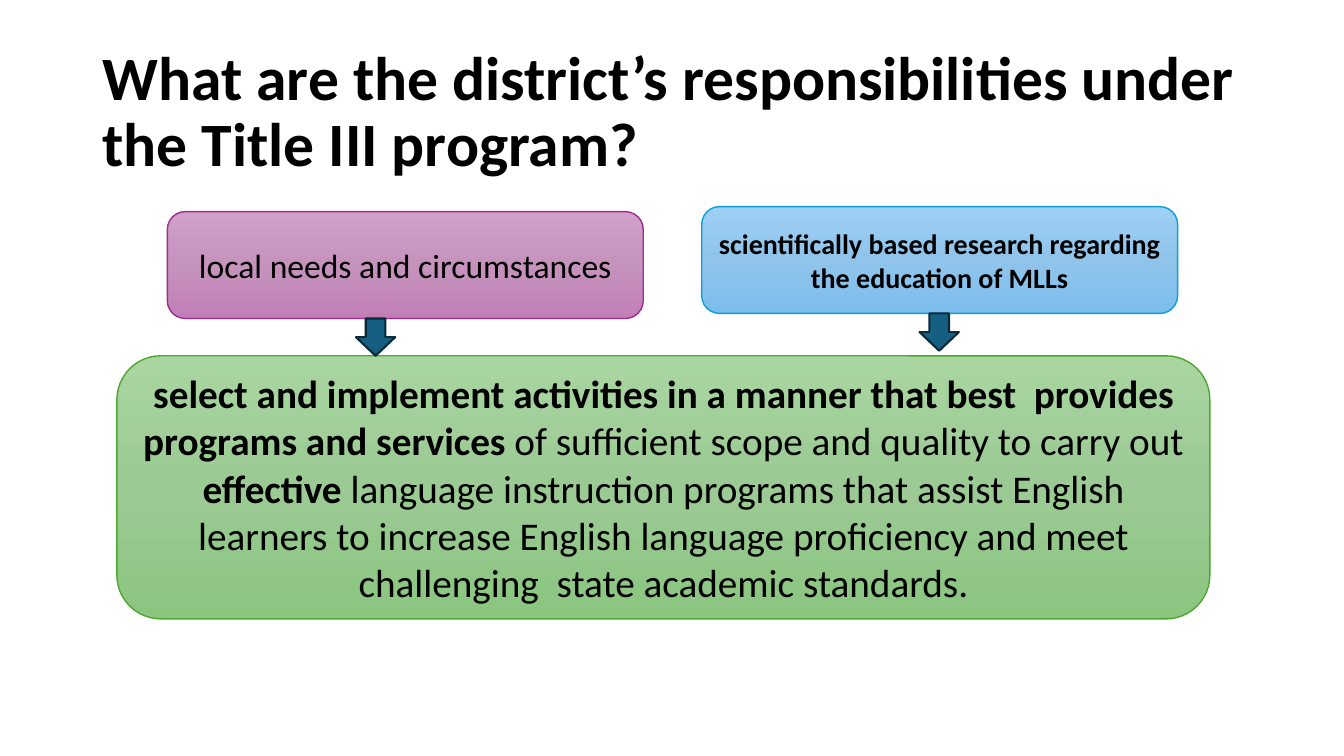
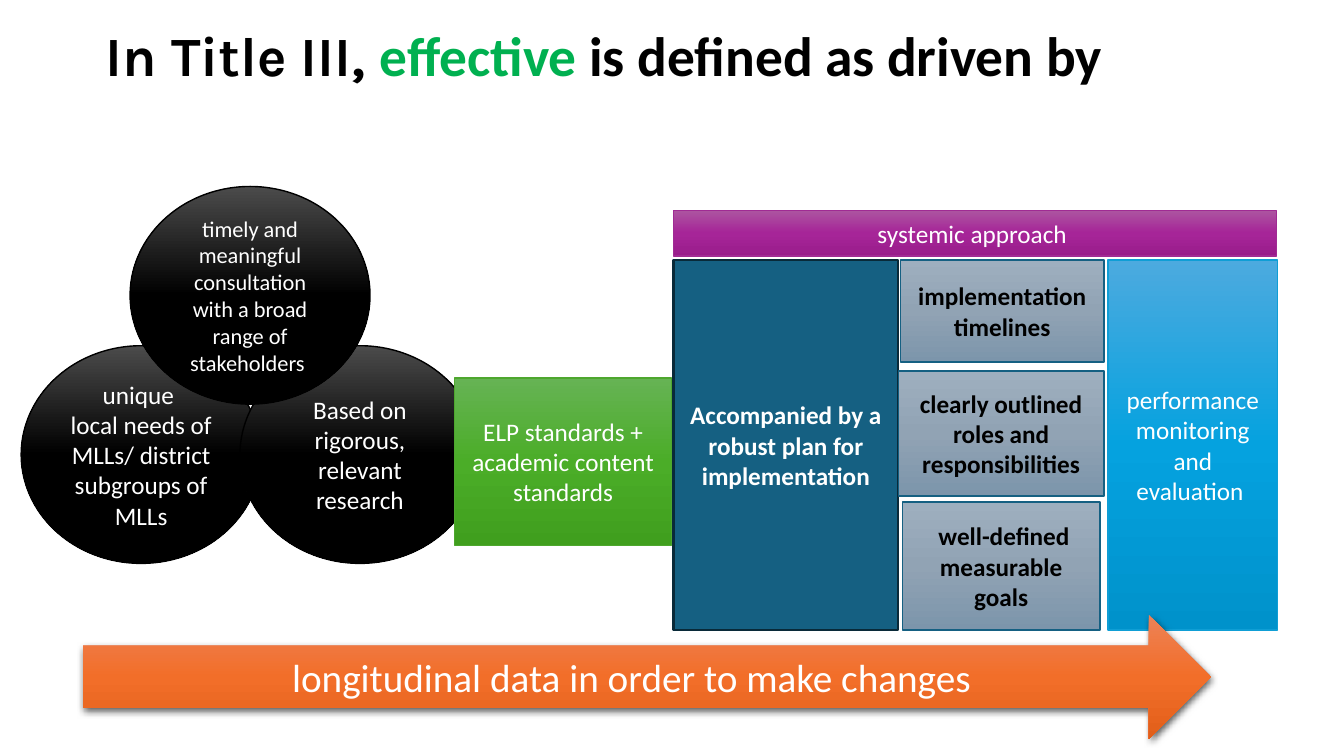
from copy import deepcopy

from lxml.etree import SubElement
from pptx import Presentation
from pptx.dml.color import RGBColor
from pptx.enum.shapes import MSO_SHAPE as Preset
from pptx.enum.text import MSO_ANCHOR as Anchor, PP_ALIGN as Align
from pptx.oxml.ns import qn
from pptx.util import Inches, Pt

BLACK = RGBColor(0x00, 0x00, 0x00)
WHITE = RGBColor(0xFF, 0xFF, 0xFF)
EMPHASIS = RGBColor(0x00, 0xB0, 0x50)
TEAL = RGBColor(0x15, 0x60, 0x82)
TEAL_DARK = RGBColor(0x09, 0x2A, 0x39)
PURPLE = RGBColor(0xA0, 0x2B, 0x93)
BLUE = RGBColor(0x0F, 0x9E, 0xD5)
GREEN = RGBColor(0x4E, 0xA7, 0x2E)

PALE_GREEN = (RGBColor(0xA8, 0xD5, 0xA0), RGBColor(0x9C, 0xCA, 0x94), RGBColor(0x8A, 0xC6, 0x80))
PALE_PURPLE = (RGBColor(0xD0, 0xA0, 0xC8), RGBColor(0xC6, 0x93, 0xBD), RGBColor(0xC1, 0x7F, 0xB6))
PALE_BLUE = (RGBColor(0x9E, 0xCF, 0xF5), RGBColor(0x90, 0xC4, 0xEB), RGBColor(0x7C, 0xBE, 0xED))
SLATE = (RGBColor(0x9E, 0xAF, 0xBF), RGBColor(0x91, 0xA3, 0xB4), RGBColor(0x7C, 0x95, 0xAB))
GLOSS_BLACK = (RGBColor(0x4B, 0x4B, 0x4B), BLACK, BLACK)
GLOSS_PURPLE = (RGBColor(0xAC, 0x53, 0xA0), RGBColor(0xA6, 0x25, 0x98), RGBColor(0x99, 0x1C, 0x8B))
GLOSS_GREEN = (RGBColor(0x66, 0xB3, 0x54), RGBColor(0x4B, 0xAD, 0x28), RGBColor(0x40, 0x9F, 0x1E))
GLOSS_BLUE = (RGBColor(0x4C, 0xAA, 0xDF), RGBColor(0x05, 0xA2, 0xDF), RGBColor(0x00, 0x92, 0xCB))
GLOSS_ORANGE = (RGBColor(0xED, 0x82, 0x57), RGBColor(0xF2, 0x6E, 0x29), RGBColor(0xE2, 0x5F, 0x1A))


class SlideBuilder:
    body_format = {"name": "Calibri", "size": Pt(18), "bold": False, "color": BLACK}

    def __init__(self, deck):
        self.deck = deck
        self.page = None

    def add_page(self):
        self.page = self.deck.slides.add_slide(self.deck.slide_layouts[6])

    def add_span(self, para, text, **changes):
        span = para.add_run()
        span.text = text
        for key, value in {**self.body_format, **changes}.items():
            if key == "color":
                span.font.color.rgb = value
            else:
                setattr(span.font, key, value)

    def add_title(self, place, spans, size):
        frame = self.page.shapes.add_textbox(*map(Inches, place)).text_frame
        frame.word_wrap = True
        frame.vertical_anchor = Anchor.MIDDLE
        para = frame.paragraphs[0]
        para.line_spacing = 0.9
        for text, changes in spans:
            self.add_span(para, text, **{"size": Pt(size), "bold": True, **changes})

    def add_gradient(self, box, colors):
        box.fill.gradient()
        box.fill.gradient_angle = 270
        stop_list = box._element.spPr.find(".//" + qn("a:gsLst"))
        stop_list.insert(1, deepcopy(stop_list[0]))
        for stop, position, color in zip(box.fill.gradient_stops, (0, 0.5, 1), colors):
            stop.position = position
            stop.color.rgb = color

    def add_box(self, preset, place, fill, line=None, paragraphs=(), width=1, **changes):
        box = self.page.shapes.add_shape(preset, *map(Inches, place))
        box.shadow.inherit = False
        if isinstance(fill, RGBColor):
            box.fill.solid()
            box.fill.fore_color.rgb = fill
        else:
            self.add_gradient(box, fill)
        if line is None:
            box.line.fill.background()
        else:
            box.line.color.rgb = line
            box.line.width = Pt(width)
        frame = box.text_frame
        frame.word_wrap = True
        frame.vertical_anchor = Anchor.MIDDLE
        for index, spans in enumerate(paragraphs):
            para = frame.add_paragraph() if index else frame.paragraphs[0]
            para.alignment = Align.CENTER
            for text, span_changes in spans:
                self.add_span(para, text, **{**changes, **span_changes})
        return box

    def add_label(self, preset, place, fill, line, text, **changes):
        paragraphs = [[(part, {})] for part in text.split("\n")]
        return self.add_box(preset, place, fill, line, paragraphs, **changes)

    def add_shadow(self, box):
        effects = box._element.spPr.find(qn("a:effectLst"))
        shadow = SubElement(effects, qn("a:outerShdw"), blurRad=str(Pt(4.5)),
                            dist=str(Pt(1.5)), dir="5400000", algn="ctr", rotWithShape="0")
        color = SubElement(shadow, qn("a:srgbClr"), val=str(BLACK))
        SubElement(color, qn("a:alpha"), val="63000")


def build_responsibilities(builder):
    builder.add_page()
    builder.add_title((0.92, 0.4, 11.5, 1.45), [
        ("What are the district’s responsibilities under the Title III program?", {})], 44)
    strong = {"bold": True}
    builder.add_box(Preset.ROUNDED_RECTANGLE, (1.16, 3.53, 10.84, 2.61), PALE_GREEN, GREEN, [[
        ("select and implement activities in a manner that best  provides "
         "programs and services ", strong),
        ("of sufficient scope and quality to carry out ", {}),
        ("effective", strong),
        (" language instruction programs that assist English learners to increase English "
         "language proficiency and meet challenging  state academic standards.", {}),
    ]], size=Pt(28))
    sources = [
        (1.66, 2.1, 3.53, PALE_PURPLE, PURPLE, "local needs and circumstances",
         {"size": Pt(24)}),
        (6.96, 2.05, 9.12, PALE_BLUE, BLUE,
         "scientifically based research regarding the education of MLLs",
         {"size": Pt(20), "bold": True}),
    ]
    height = 1.06
    for left, top, arrow_left, fill, line, text, changes in sources:
        builder.add_label(Preset.ROUNDED_RECTANGLE, (left, top, 4.72, height),
                          fill, line, text, **changes)
        builder.add_box(Preset.DOWN_ARROW, (arrow_left, top + height, 0.39, 0.37),
                        TEAL, TEAL_DARK, width=1.5)


def build_effective(builder):
    builder.add_page()
    builder.add_title((0.95, 0.45, 11.81, 0.26), [
        ("In Title III, ", {"name": "Karla"}),
        ("effective", {"color": EMPHASIS}),
        (" is defined as driven by", {}),
    ], 39.6)

    def add_circle(left, top, text, size=18):
        builder.add_label(Preset.OVAL, (left, top, 2.38, 2.16), GLOSS_BLACK, BLACK, text,
                          size=Pt(size), color=WHITE)

    add_circle(0.21, 3.43, "unique \nlocal needs of MLLs/ district subgroups of MLLs")
    add_circle(2.38, 3.43, "Based on rigorous, relevant research")

    plan_top, plan_height = 2.58, 3.67
    builder.add_label(Preset.RECTANGLE, (6.68, plan_top, 2.23, plan_height), TEAL, TEAL_DARK,
                      "Accompanied by a robust plan for implementation",
                      width=1.5, bold=True, color=WHITE)
    plan_parts = [
        ((8.95, 4.98, 1.96, 1.27), " well-defined measurable goals"),
        ((8.91, 3.68, 2.04, 1.24), "clearly outlined roles and responsibilities"),
        ((8.93, plan_top, 2.02, 1.01), "implementation timelines"),
    ]
    for place, text in plan_parts:
        builder.add_label(Preset.RECTANGLE, place, SLATE, TEAL, text, bold=True)
    panels = [
        ((6.68, 2.09, 5.98, 0.45), GLOSS_PURPLE, PURPLE, "systemic approach "),
        ((4.51, 3.75, 2.15, 1.66), GLOSS_GREEN, GREEN,
         "ELP standards + academic content standards"),
        ((10.99, plan_top, 1.68, plan_height), GLOSS_BLUE, BLUE,
         "performance monitoring and evaluation "),
    ]
    for place, fill, line, text in panels:
        builder.add_label(Preset.RECTANGLE, place, fill, line, text, color=WHITE)

    arrow = builder.add_label(Preset.RIGHT_ARROW, (0.82, 6.1, 11.19, 1.23), GLOSS_ORANGE, None,
                              "longitudinal data in order to make changes",
                              size=Pt(28), color=WHITE)
    builder.add_shadow(arrow)
    add_circle(1.29, 1.85, "timely and meaningful consultation with a broad range of "
               "stakeholders ", 16)


def main():
    deck = Presentation()
    deck.slide_width, deck.slide_height = Inches(13.33), Inches(7.5)
    builder = SlideBuilder(deck)
    build_responsibilities(builder)
    build_effective(builder)
    deck.save("out.pptx")


if __name__ == "__main__":
    main()
